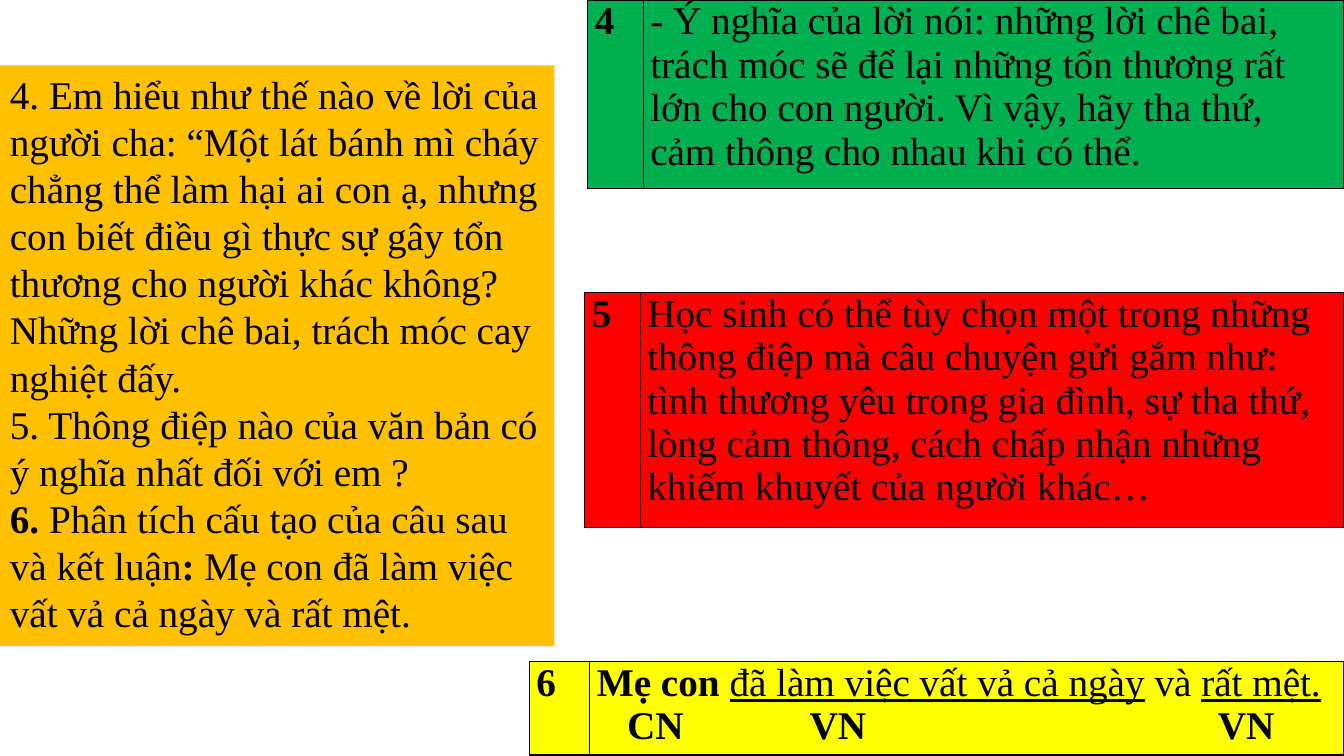
from lxml.etree import SubElement as Sub
from pptx import Presentation
from pptx.dml.color import RGBColor as Rgb
from pptx.enum.shapes import MSO_SHAPE as Shape
from pptx.enum.text import MSO_ANCHOR as Anchor, PP_ALIGN as Align
from pptx.oxml.ns import qn
from pptx.util import Pt

PX = 9144
BLACK = Rgb(0, 0, 0)
AMBER = Rgb(0xFF, 0xC0, 0x00)
GREEN = Rgb(0x00, 0xB0, 0x50)
RED = Rgb(0xFF, 0x00, 0x00)
YELLOW = Rgb(0xFF, 0xFF, 0x00)
FONT = {"name": "Times New Roman", "size": Pt(28), "bold": False}
BOLD = {"bold": True}
LINE = {"underline": True}
TABS = (30, 211, 616)

TASKS = [
    [("4. Em hiểu như thế nào về lời của người cha: “Một lát bánh mì cháy chẳng thể "
      "làm hại ai con ạ, nhưng con biết điều gì thực sự gây tổn thương cho người khác "
      "không? Những lời chê bai, trách móc cay nghiệt đấy.", {})],
    [("5. Thông điệp nào của văn bản có ý nghĩa nhất đối với em ?", {})],
    [("6. ", BOLD), ("Phân tích cấu tạo của câu sau và kết luận", {}), (": ", BOLD),
     ("Mẹ con đã làm việc vất vả cả ngày và rất mệt.", {})],
]
KEYS = [
    ("4", (583, 0, 750, 187), 55, GREEN, [
        [("- Ý nghĩa của lời nói: những lời chê bai, trách móc sẽ để lại những tổn thương "
          "rất lớn cho con người. Vì vậy, hãy tha thứ, cảm thông cho nhau khi có thể.", {})]]),
    ("5", (580, 290, 753, 233), 55, RED, [
        [("Học sinh có thể tùy chọn một trong những thông điệp mà câu chuyện gửi gắm như: "
          "tình thương yêu trong gia đình, sự tha thứ, lòng cảm thông, cách chấp nhận những "
          "khiếm khuyết của người khác…", {})]]),
    ("6", (525, 656, 808, 93), 60, YELLOW, [
        [("Mẹ con ", BOLD), ("đã làm việc vất vả cả ngày", LINE), (" và ", {}),
         ("rất mệt.", LINE)],
        [("\tCN\tVN\tVN", BOLD)]]),
]


def scale(box):
    """Turn px lengths into EMU."""
    return [n * PX for n in box]


def write(frame, paras):
    """Fill a text frame with paragraphs of formatted runs."""
    frame.word_wrap = True
    for i, parts in enumerate(paras):
        para = frame.add_paragraph() if i else frame.paragraphs[0]
        para.alignment = Align.LEFT
        for text, look in parts:
            run = para.add_run()
            run.text = text
            run.font.color.rgb = BLACK
            for key, val in {**FONT, **look}.items():
                setattr(run.font, key, val)


def set_tabs(para, stops):
    """Give a paragraph left tab stops."""
    tabs = Sub(para._p.get_or_add_pPr(), qn("a:tabLst"))
    for stop in stops:
        Sub(tabs, qn("a:tab"), pos=str(stop * PX), algn="l")


def edge(cell):
    """Draw a thin black border round a cell."""
    props = cell._tc.get_or_add_tcPr()
    for i, side in enumerate("LRTB"):
        line = Sub(props, qn(f"a:ln{side}"), w=str(Pt(1)))
        Sub(Sub(line, qn("a:solidFill")), qn("a:srgbClr"), val=str(BLACK))
        props.insert(i, line)


def add_tasks(slide, box):
    """Place the panel of questions."""
    panel = slide.shapes.add_shape(Shape.RECTANGLE, *scale(box))
    panel.shadow.inherit = False
    panel.fill.solid()
    panel.fill.fore_color.rgb = AMBER
    panel.line.fill.background()
    panel.text_frame.vertical_anchor = Anchor.TOP
    write(panel.text_frame, TASKS)


def add_key(slide, num, box, first, fill, paras):
    """Place one numbered answer as a table row."""
    table = slide.shapes.add_table(1, 2, *scale(box)).table
    table.first_row = table.horz_banding = False
    pad = {"margin_left": 7 * PX, "margin_right": 7 * PX,
           "margin_top": 0, "margin_bottom": 0}
    texts = ([[(num, BOLD)]], paras)
    for i, wide in enumerate((first, box[2] - first)):
        table.columns[i].width = wide * PX
        cell = table.cell(0, i)
        for key, val in pad.items():
            setattr(cell, key, val)
        cell.fill.solid()
        cell.fill.fore_color.rgb = fill
        edge(cell)
        write(cell.text_frame, texts[i])
        for para in cell.text_frame.paragraphs:
            if "\t" in para.text:
                set_tabs(para, TABS)


def main():
    """Build the slide and save it."""
    deck = Presentation()
    deck.slide_width, deck.slide_height = scale((1333, 750))
    slide = deck.slides.add_slide(deck.slide_layouts[6])
    add_tasks(slide, (0, 65, 550, 576))
    for key in KEYS:
        add_key(slide, *key)
    deck.save("out.pptx")


if __name__ == "__main__":
    main()
